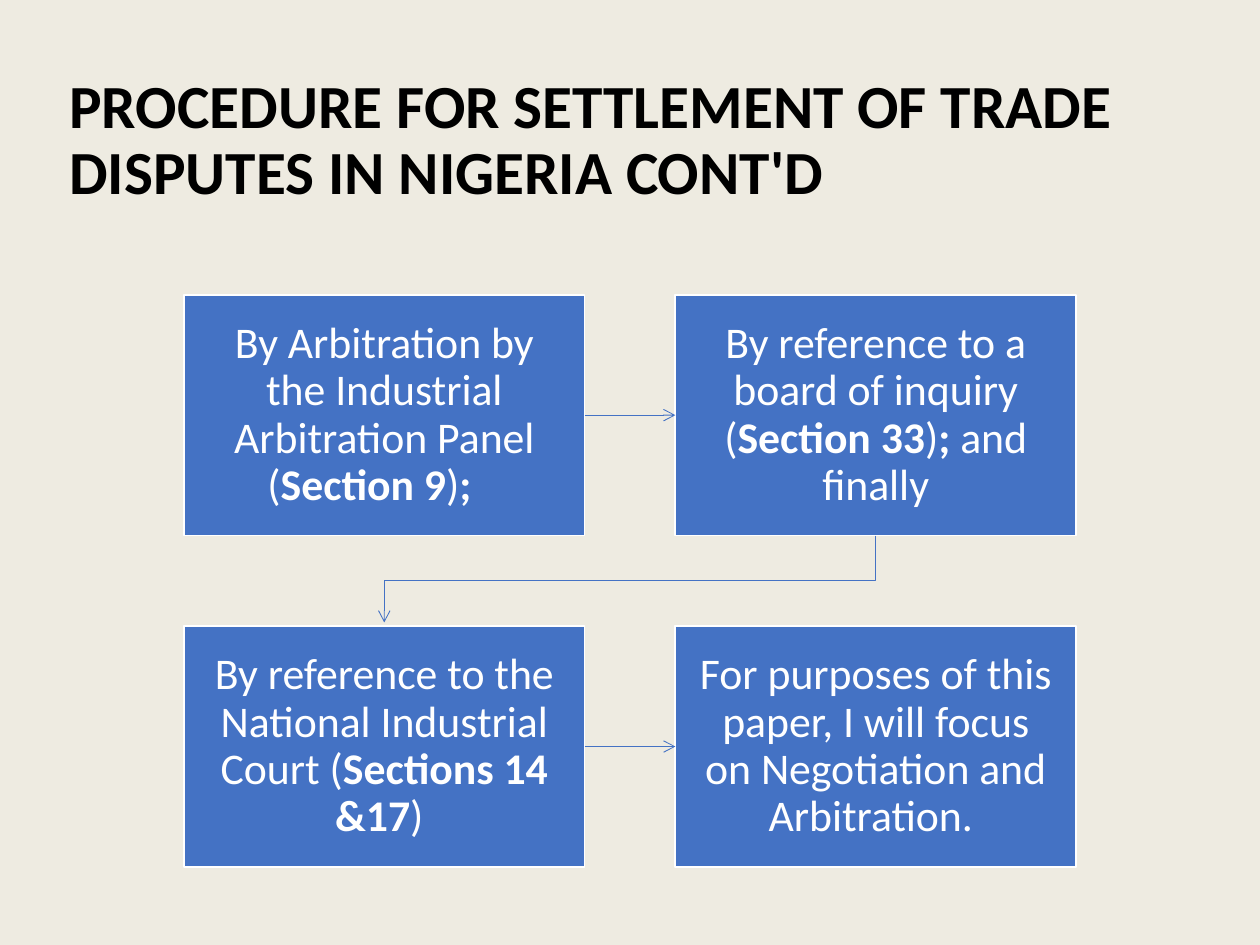
from dataclasses import dataclass

import pptx
import pptx.dml.color
import pptx.enum.shapes
import pptx.enum.text
import pptx.oxml
import pptx.oxml.ns
import pptx.util
from pptx.util import Inches

RGBColor = pptx.dml.color.RGBColor
BACKGROUND = RGBColor(0xEE, 0xEB, 0xE1)
BLUE = RGBColor(0x44, 0x72, 0xC4)
WHITE = RGBColor(0xFF, 0xFF, 0xFF)
BLACK = RGBColor(0x00, 0x00, 0x00)

FONT = "Calibri"
LEFT, TOP = 1.46, 2.34
BOX_W, BOX_H = 3.18, 1.91
STEP_X, STEP_Y = 3.9, 2.63
ARROW_GAP = 0.03


@dataclass
class Run:
    text: str
    bold: bool = False


@dataclass
class Step:
    col: int
    row: int
    runs: list[Run]

    @property
    def left(self) -> float:
        return LEFT + self.col * STEP_X

    @property
    def top(self) -> float:
        return TOP + self.row * STEP_Y

    @property
    def center_x(self) -> float:
        return self.left + BOX_W / 2


STEPS = [
    Step(0, 0, [
        Run("By Arbitration by the Industrial Arbitration Panel ("),
        Run("Section 9", True), Run(")"), Run(";   ", True),
    ]),
    Step(1, 0, [
        Run("By reference to a board of inquiry ("),
        Run("Section 33", True), Run(")"), Run("; ", True),
        Run("and finally"),
    ]),
    Step(0, 1, [
        Run("By reference to the National Industrial Court ("),
        Run("Sections 14 &17", True), Run(") "),
    ]),
    Step(1, 1, [
        Run("For purposes of this paper, I will focus on Negotiation "
            "and Arbitration. "),
    ]),
]


def add_run(p, run: Run, size: float, color: RGBColor) -> None:
    r = p.add_run()
    r.text = run.text
    r.font.name = FONT
    r.font.size = pptx.util.Pt(size)
    r.font.bold = run.bold
    r.font.color.rgb = color


def add_title(s, text: str) -> None:
    sp = s.shapes.title
    sp.left, sp.top = Inches(0.45), Inches(0.4)
    sp.width, sp.height = Inches(9.1), Inches(1.45)
    tf = sp.text_frame
    tf.word_wrap = True
    tf.auto_size = pptx.enum.text.MSO_AUTO_SIZE.NONE
    tf.vertical_anchor = pptx.enum.text.MSO_ANCHOR.MIDDLE
    p = tf.paragraphs[0]
    p.alignment = pptx.enum.text.PP_ALIGN.LEFT
    p.line_spacing = 0.9
    add_run(p, Run(text, True), 35, BLACK)


def add_box(s, step: Step):
    sp = s.shapes.add_shape(
        pptx.enum.shapes.MSO_SHAPE.RECTANGLE,
        Inches(step.left), Inches(step.top), Inches(BOX_W), Inches(BOX_H))
    sp.shadow.inherit = False
    sp.fill.solid()
    sp.fill.fore_color.rgb = BLUE
    sp.line.color.rgb = WHITE
    sp.line.width = pptx.util.Pt(1)
    tf = sp.text_frame
    tf.word_wrap = True
    tf.vertical_anchor = pptx.enum.text.MSO_ANCHOR.MIDDLE
    tf.margin_left = tf.margin_right = Inches(0.16)
    tf.margin_top = tf.margin_bottom = Inches(0.16)
    p = tf.paragraphs[0]
    p.alignment = pptx.enum.text.PP_ALIGN.CENTER
    p.line_spacing = 0.9
    for run in step.runs:
        add_run(p, run, 25, WHITE)
    return sp


def style_arrow(sp) -> None:
    sp.line.color.rgb = BLUE
    sp.line.width = pptx.util.Pt(0.5)
    tail = pptx.oxml.parse_xml(
        f'<a:tailEnd {pptx.oxml.ns.nsdecls("a")} type="arrow"/>')
    sp.line._get_or_add_ln().append(tail)


def add_straight_arrow(s, start, end) -> None:
    cx = s.shapes.add_connector(
        pptx.enum.shapes.MSO_CONNECTOR.STRAIGHT, 0, 0, 0, 0)
    cx.begin_connect(start, 3)
    cx.end_connect(end, 1)
    style_arrow(cx)
    cx._element.spPr.append(pptx.oxml.parse_xml(
        f'<a:effectLst {pptx.oxml.ns.nsdecls("a")}/>'))


def add_return_arrow(s, start: Step, end: Step) -> None:
    bottom = start.top + BOX_H
    middle = (bottom + end.top) / 2
    points = [
        (start.center_x, middle),
        (end.center_x, middle),
        (end.center_x, end.top - ARROW_GAP),
    ]
    fb = s.shapes.build_freeform(Inches(start.center_x), Inches(bottom))
    fb.add_line_segments([(Inches(x), Inches(y)) for x, y in points], close=False)
    sp = fb.convert_to_shape()
    sp.shadow.inherit = False
    sp.fill.background()
    style_arrow(sp)


def main() -> None:
    prs = pptx.Presentation()
    prs.slide_width, prs.slide_height = Inches(10), Inches(7.5)
    s = prs.slides.add_slide(prs.slide_layouts[5])
    s.background.fill.solid()
    s.background.fill.fore_color.rgb = BACKGROUND
    add_title(s, "PROCEDURE FOR SETTLEMENT OF TRADE DISPUTES IN NIGERIA CONT'D")
    boxes = [add_box(s, step) for step in STEPS]
    for start, end in zip(boxes[::2], boxes[1::2]):
        add_straight_arrow(s, start, end)
    add_return_arrow(s, STEPS[1], STEPS[2])
    prs.save("out.pptx")


if __name__ == "__main__":
    main()
